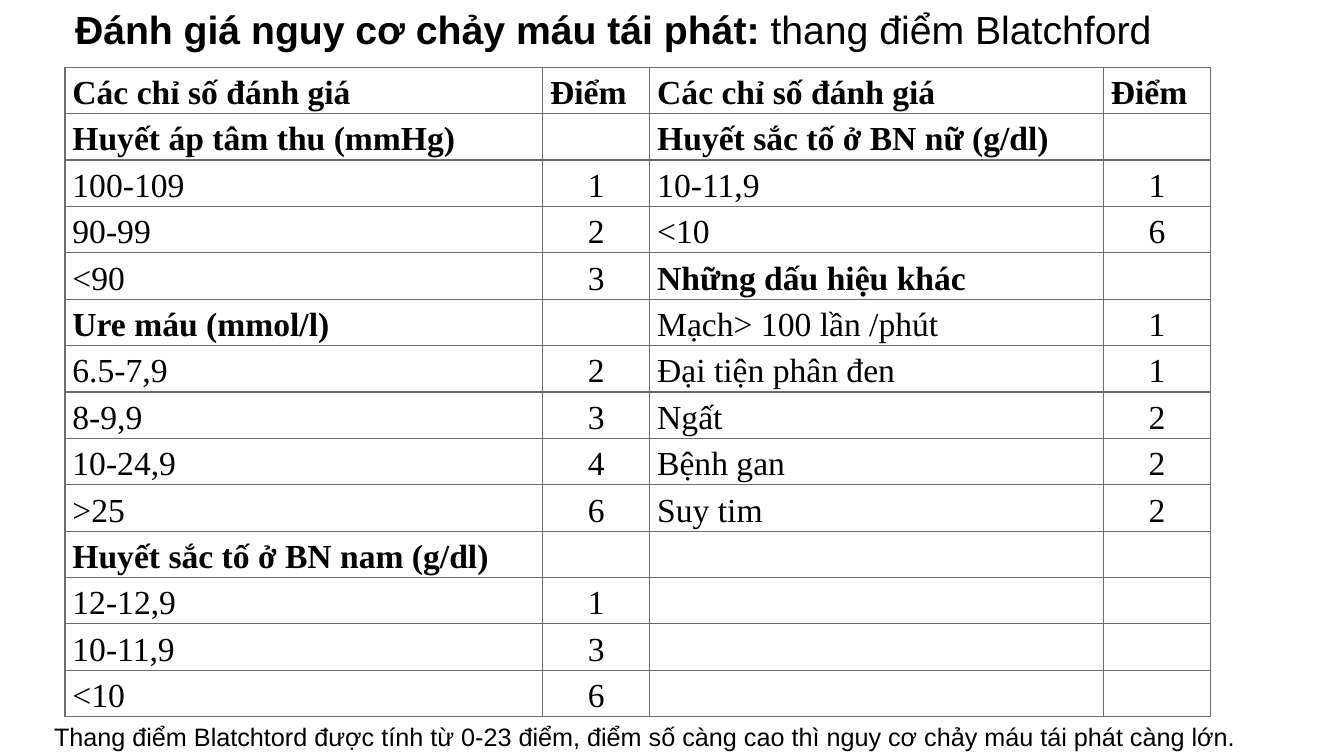
from itertools import zip_longest

from lxml import etree
from pptx import Presentation
from pptx import util as u
from pptx.dml.color import RGBColor
from pptx.enum import text
from pptx.oxml.ns import qn

PX = 9525  # EMU per px, 96 px to the inch
BLACK = RGBColor(0x00, 0x00, 0x00)
GREY = RGBColor(0x6D, 0x6D, 0x6D)

HEADER = ("Các chỉ số đánh giá", "Điểm")
LEFT_CRITERIA = [
    HEADER,
    ("Huyết áp tâm thu (mmHg)", ""),
    ("100-109", "1"),
    ("90-99", "2"),
    ("<90", "3"),
    ("Ure máu (mmol/l)", ""),
    ("6.5-7,9", "2"),
    ("8-9,9", "3"),
    ("10-24,9", "4"),
    (">25", "6"),
    ("Huyết sắc tố ở BN nam (g/dl)", ""),
    ("12-12,9", "1"),
    ("10-11,9", "3"),
    ("<10", "6"),
]
RIGHT_CRITERIA = [
    HEADER,
    ("Huyết sắc tố ở BN nữ (g/dl)", ""),
    ("10-11,9", "1"),
    ("<10", "6"),
    ("Những dấu hiệu khác", ""),
    ("Mạch> 100 lần /phút", "1"),
    ("Đại tiện phân đen", "1"),
    ("Ngất", "2"),
    ("Bệnh gan", "2"),
    ("Suy tim", "2"),
]
COLUMN_WIDTHS = (455, 102, 432, 102)
ROW_HEIGHT = 32


def px(length):
    return u.Emu(length * PX)


def set_font(paragraph, name, size, bold=None):
    font = paragraph.font
    font.name, font.size, font.bold = name, u.Pt(size), bold
    font.color.rgb = BLACK


def add_text(slide, left, top, width, height, runs, size, wrap=True):
    """Add a one-paragraph text box from (wording, bold) pairs."""
    box = slide.shapes.add_textbox(px(left), px(top), px(width), px(height))
    box.text_frame.word_wrap = wrap
    paragraph = box.text_frame.paragraphs[0]
    set_font(paragraph, "Arial", size)
    for wording, bold in runs:
        run = paragraph.add_run()
        run.text, run.font.bold = wording, bold
    return box


def set_borders(cell):
    properties = cell._tc.get_or_add_tcPr()
    for place, side in enumerate(("lnL", "lnR", "lnT", "lnB")):
        line = etree.Element(qn(f"a:{side}"), w=str(u.Pt(1)))
        fill = etree.SubElement(line, qn("a:solidFill"))
        etree.SubElement(fill, qn("a:srgbClr"), val=str(GREY))
        properties.insert(place, line)


def fill_cell(cell, wording, bold, centred):
    cell.fill.background()
    set_borders(cell)
    cell.margin_left = cell.margin_right = px(7)
    cell.margin_top = cell.margin_bottom = 0
    cell.vertical_anchor = text.MSO_ANCHOR.MIDDLE
    if wording:
        cell.text = wording
        paragraph = cell.text_frame.paragraphs[0]
        paragraph.line_spacing = 1.15
        if centred:
            paragraph.alignment = text.PP_ALIGN.CENTER
        set_font(paragraph, "Times New Roman", 24, bold)


def add_score_table(slide, left, top):
    rows = list(zip_longest(LEFT_CRITERIA, RIGHT_CRITERIA, fillvalue=("", "")))
    scores = slide.shapes.add_table(
        len(rows), len(COLUMN_WIDTHS), px(left), px(top),
        px(sum(COLUMN_WIDTHS)), px(ROW_HEIGHT * len(rows))).table
    scores.first_row = scores.horz_banding = False
    for column, width in zip(scores.columns, COLUMN_WIDTHS):
        column.width = px(width)
    for r, criteria in enumerate(rows):
        scores.rows[r].height = px(ROW_HEIGHT)
        for half, (label, points) in enumerate(criteria):
            # Rows without a number are headings
            heading = not points.isdigit()
            fill_cell(scores.cell(r, 2 * half), label, heading, False)
            fill_cell(scores.cell(r, 2 * half + 1), points, heading, not heading)


def main():
    deck = Presentation()
    deck.slide_width, deck.slide_height = px(1280), px(720)
    slide = deck.slides.add_slide(deck.slide_layouts[6])

    # Title
    title = add_text(slide, 62, 5, 1202, 659,
                     [("Đánh giá nguy cơ chảy máu tái phát: ", True),
                      ("thang điểm Blatchford", False)], 28)
    heading = title.text_frame.paragraphs[0]
    heading.alignment = text.PP_ALIGN.JUSTIFY
    heading.line_spacing = 0.9
    heading.space_before = u.Pt(10)

    # Scores
    add_score_table(slide, 62, 64)

    # Footnote
    footnote = add_text(slide, 42, 682, 1155, 38,
                        [("Thang điểm Blatchtord được tính từ 0-23 điểm, điểm số "
                          "càng cao thì nguy cơ chảy máu tái phát càng lớn.", None)],
                        18, wrap=False)
    footnote.text_frame.auto_size = text.MSO_AUTO_SIZE.SHAPE_TO_FIT_TEXT

    deck.save("out.pptx")


if __name__ == "__main__":
    main()
